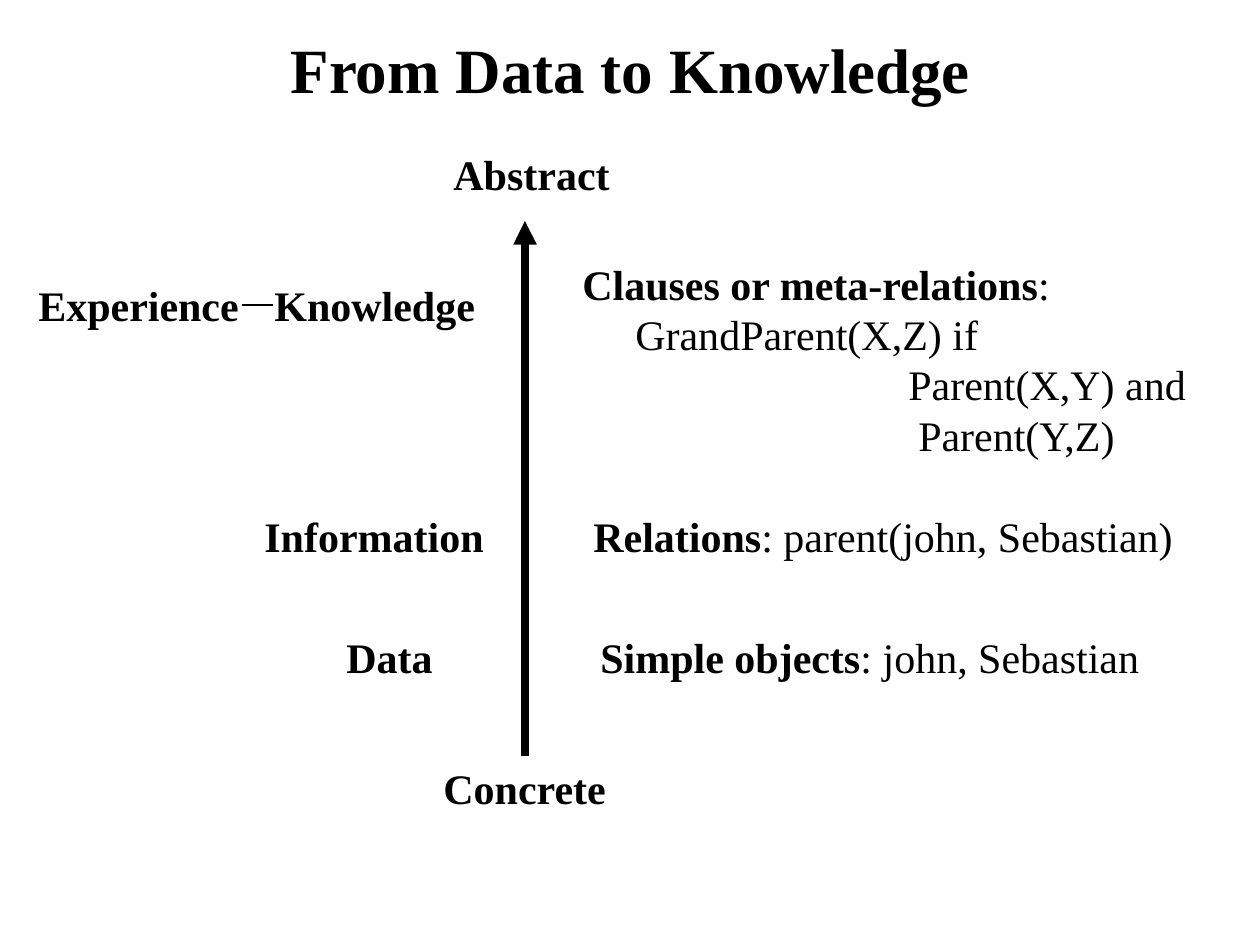
from dataclasses import dataclass

from lxml.etree import SubElement
from pptx import Presentation
from pptx.dml.color import RGBColor
from pptx.enum.shapes import MSO_CONNECTOR
from pptx.enum.text import MSO_ANCHOR, MSO_AUTO_SIZE, PP_ALIGN
from pptx.oxml.ns import qn
from pptx.util import Pt

PX = 914400 / 126  # EMU in one px


@dataclass(frozen=True)
class Theme:
    font: str = "Times New Roman"
    ink: RGBColor = RGBColor(0, 0, 0)
    title_size: int = 36
    body_size: int = 24
    axis_width: float = 4.5
    link_width: float = 0.75


THEME = Theme()

# Content: a line is (bold part, plain part, indent)
TITLE = "From Data to Knowledge"
TITLE_BOX = (95, -11, 1071, 158)

LINE_HEIGHT = 63
LABELS = [  # text, left, top, width with a little slack so no word breaks
    ("Data", 334, 625, 114),
    ("Information", 252, 504, 248),
    ("Knowledge", 262, 273, 228),
    ("Experience", 26, 273, 228),
    ("Abstract", 441, 142, 185),
    ("Concrete", 431, 756, 190),
]
EXAMPLES = [  # lines, left, top, width, height
    ([("Simple objects", ": john, Sebastian", 0)], 588, 625, 566, LINE_HEIGHT),
    ([("Relations", ": parent(john, Sebastian)", 0)], 581, 504, 607, LINE_HEIGHT),
    ([("Clauses or meta-relations", ":", 0),
      ("", "GrandParent(X,Z) if", 53),
      ("", "Parent(X,Y) and", 326),
      ("", "Parent(Y,Z)", 336)], 570, 252, 631, 214),
]
AXIS = (525, 221, 525, 756)
EXPERIENCE_LINK = (242, 305, 273, 305)


def px(*lengths):
    return [round(length * PX) for length in lengths]


def add_text(slide, lines, box, size=THEME.body_size):
    frame = slide.shapes.add_textbox(*px(*box)).text_frame
    frame.word_wrap = False
    frame.auto_size = MSO_AUTO_SIZE.SHAPE_TO_FIT_TEXT
    for number, (bold_part, plain_part, indent) in enumerate(lines):
        paragraph = frame.add_paragraph() if number else frame.paragraphs[0]
        if indent:
            paragraph._p.get_or_add_pPr().set("marL", str(px(indent)[0]))
        for text, bold in ((bold_part, True), (plain_part, False)):
            if text:
                run = paragraph.add_run()
                run.text = text
                run.font.name = THEME.font
                run.font.size = Pt(size)
                run.font.bold = bold
                run.font.color.rgb = THEME.ink
    return frame


def add_line(slide, ends, width, arrow=False):
    line = slide.shapes.add_connector(MSO_CONNECTOR.STRAIGHT, *px(*ends))
    line.line.color.rgb = THEME.ink
    line.line.width = Pt(width)
    if arrow:
        SubElement(line.line._get_or_add_ln(), qn("a:headEnd"), type="triangle")
    SubElement(line._element.spPr, qn("a:effectLst"))


def main():
    deck = Presentation()
    deck.slide_width, deck.slide_height = px(1260, 945)
    slide = deck.slides.add_slide(deck.slide_layouts[6])

    # Title
    title = add_text(slide, [(TITLE, "", 0)], TITLE_BOX, THEME.title_size)
    title.auto_size = MSO_AUTO_SIZE.NONE
    title.word_wrap = True
    title.vertical_anchor = MSO_ANCHOR.MIDDLE
    title.paragraphs[0].alignment = PP_ALIGN.CENTER

    # Axis from concrete up to abstract
    add_line(slide, AXIS, THEME.axis_width, arrow=True)

    # Levels on the left, axis ends, and examples on the right
    for text, left, top, width in LABELS:
        add_text(slide, [(text, "", 0)], (left, top, width, LINE_HEIGHT))
    for lines, *box in EXAMPLES:
        add_text(slide, lines, box)

    # Link between experience and knowledge
    add_line(slide, EXPERIENCE_LINK, THEME.link_width)

    deck.save("out.pptx")


if __name__ == "__main__":
    main()
